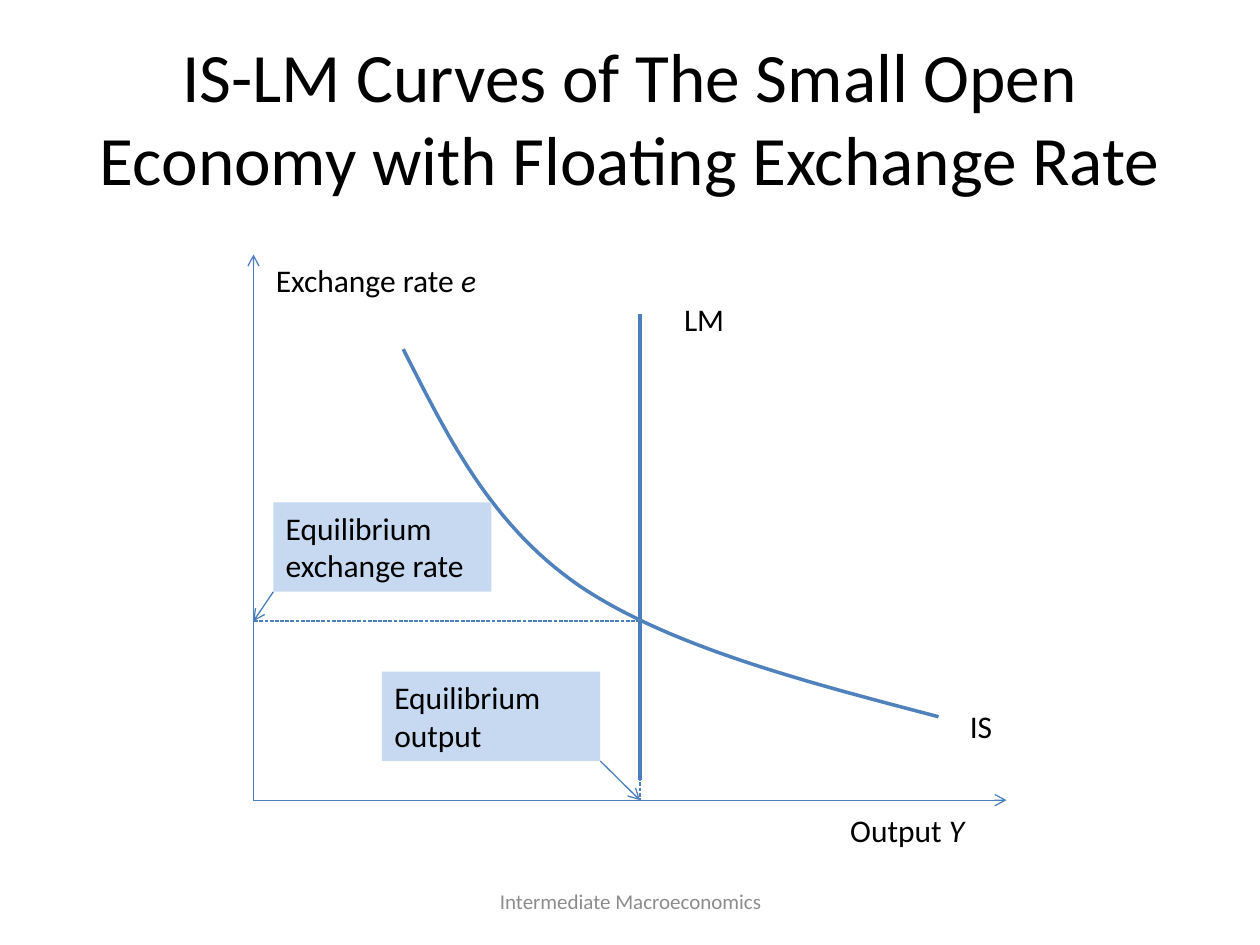
from dataclasses import dataclass

import lxml.etree
import pptx
import pptx.dml.color
import pptx.enum.dml
import pptx.enum.shapes
import pptx.enum.text
import pptx.oxml.ns
import pptx.util
from pptx.util import Cm

BLACK = pptx.dml.color.RGBColor(0x00, 0x00, 0x00)
GREY = pptx.dml.color.RGBColor(0x8C, 0x8C, 0x8C)
LINE_BLUE = pptx.dml.color.RGBColor(0x4B, 0x7E, 0xBC)
CURVE_BLUE = pptx.dml.color.RGBColor(0x4F, 0x81, 0xBD)
BOX_BLUE = pptx.dml.color.RGBColor(0xC6, 0xD9, 0xF1)
ALIGN = pptx.enum.text.PP_ALIGN
ANCHOR = pptx.enum.text.MSO_ANCHOR

Point = tuple[float, float]

# Diagram geometry in centimetres
ORIGIN: Point = (5.11, 16.13)
EQUILIBRIUM: Point = (12.9, 12.52)
OUTPUT_MARK: Point = (EQUILIBRIUM[0], ORIGIN[1])
RATE_MARK: Point = (ORIGIN[0], EQUILIBRIUM[1])
BOX_WIDTH, BOX_HEIGHT = 4.4, 1.8
IS_SEGMENTS: list[list[Point]] = [
    [(8.13, 7.04), (9.02, 8.79), (9.88, 10.57), (11.68, 11.81)],
    [(11.68, 11.81), (13.49, 13.03), (16.21, 13.74), (18.92, 14.45)],
]


@dataclass
class Line:
    start: Point
    end: Point
    width: float = 0.75
    dashed: bool = False
    arrow: bool = False


@dataclass
class Label:
    text: str
    left: float
    top: float
    width: float
    italic_end: str = ""


@dataclass
class Callout:
    text: str
    left: float
    top: float
    corner: int  # 0 for the lower left corner, 1 for the lower right
    target: Point


LINES = [
    Line(ORIGIN, (20.29, ORIGIN[1]), arrow=True),
    Line(ORIGIN, (ORIGIN[0], 5.13), arrow=True),
    Line((EQUILIBRIUM[0], 6.32), (EQUILIBRIUM[0], 15.72), width=2),
    Line(EQUILIBRIUM, RATE_MARK, dashed=True),
    Line((EQUILIBRIUM[0], 14.94), OUTPUT_MARK, dashed=True),
]
LABELS = [
    Label("IS", 19.3, 14.12, 1.0),
    Label("LM", 13.54, 5.92, 1.96),
    Label("Exchange rate ", 5.31, 5.13, 4.8, "e"),
    Label("Output ", 16.89, 16.23, 3.0, "Y"),
]
CALLOUTS = [
    Callout("Equilibrium exchange rate", 5.51, 10.13, 0, RATE_MARK),
    Callout("Equilibrium output", 7.7, 13.54, 1, OUTPUT_MARK),
]


def write_text(frame, text: str, *, italic_end: str = "", size: float = 18,
               color=BLACK, align=ALIGN.LEFT, anchor=ANCHOR.TOP) -> None:
    frame.word_wrap = True
    frame.vertical_anchor = anchor
    paragraph = frame.paragraphs[0]
    paragraph.alignment = align
    for part, italic in ((text, False), (italic_end, True)):
        if part:
            run = paragraph.add_run()
            run.text = part
            run.font.name = "Calibri"
            run.font.size = pptx.util.Pt(size)
            run.font.italic = italic
            run.font.color.rgb = color


def add_line(slide, line: Line) -> None:
    connector = slide.shapes.add_connector(
        pptx.enum.shapes.MSO_CONNECTOR.STRAIGHT,
        *(Cm(value) for value in line.start + line.end))
    connector.line.color.rgb = LINE_BLUE
    connector.line.width = pptx.util.Pt(line.width)
    if line.dashed:
        connector.line.dash_style = pptx.enum.dml.MSO_LINE.SQUARE_DOT
    properties = connector._element.spPr
    if line.arrow:
        outline = properties.find(pptx.oxml.ns.qn("a:ln"))
        lxml.etree.SubElement(outline, pptx.oxml.ns.qn("a:tailEnd"), type="arrow")
    lxml.etree.SubElement(properties, pptx.oxml.ns.qn("a:effectLst"))


def bezier_point(controls: list[Point], t: float) -> Point:
    weights = ((1 - t) ** 3, 3 * t * (1 - t) ** 2, 3 * t ** 2 * (1 - t), t ** 3)
    x, y = (sum(weight * value for weight, value in zip(weights, axis))
            for axis in zip(*controls))
    return x, y


def add_curve(slide, segments: list[list[Point]], steps: int = 30) -> None:
    points = [bezier_point(controls, step / steps)
              for controls in segments for step in range(1, steps + 1)]
    start_x, start_y = segments[0][0]
    builder = slide.shapes.build_freeform(Cm(start_x), Cm(start_y))
    builder.add_line_segments([(Cm(x), Cm(y)) for x, y in points], close=False)
    curve = builder.convert_to_shape()
    curve.shadow.inherit = False
    curve.fill.background()
    curve.line.color.rgb = CURVE_BLUE
    curve.line.width = pptx.util.Pt(2)


def add_label(slide, label: Label) -> None:
    box = slide.shapes.add_textbox(
        Cm(label.left), Cm(label.top), Cm(label.width), Cm(1.02))
    write_text(box.text_frame, label.text, italic_end=label.italic_end)


def add_callout(slide, callout: Callout) -> None:
    box = slide.shapes.add_shape(
        pptx.enum.shapes.MSO_SHAPE.RECTANGLE, Cm(callout.left), Cm(callout.top),
        Cm(BOX_WIDTH), Cm(BOX_HEIGHT))
    box.shadow.inherit = False
    box.fill.solid()
    box.fill.fore_color.rgb = BOX_BLUE
    box.line.fill.background()
    write_text(box.text_frame, callout.text)
    corner = (callout.left + callout.corner * BOX_WIDTH, callout.top + BOX_HEIGHT)
    add_line(slide, Line(corner, callout.target, arrow=True))


def main() -> None:
    presentation = pptx.Presentation()
    presentation.slide_width, presentation.slide_height = Cm(25.4), Cm(19.05)
    slide = presentation.slides.add_slide(presentation.slide_layouts[5])

    # Title and footer
    title = slide.shapes.title
    title.left, title.top, title.width, title.height = (
        Cm(1.27), Cm(0.76), Cm(22.86), Cm(3.18))
    write_text(title.text_frame,
               "IS-LM Curves of The Small Open Economy with Floating Exchange Rate",
               size=39.6, align=ALIGN.CENTER, anchor=ANCHOR.MIDDLE)
    footer = slide.shapes.add_textbox(Cm(8.69), Cm(17.65), Cm(8.05), Cm(1.02))
    write_text(footer.text_frame, "Intermediate Macroeconomics", size=12,
               color=GREY, align=ALIGN.CENTER, anchor=ANCHOR.MIDDLE)

    # Axes, curves and their labels
    for line in LINES:
        add_line(slide, line)
    add_curve(slide, IS_SEGMENTS)
    for label in LABELS:
        add_label(slide, label)

    # Equilibrium callouts
    for callout in CALLOUTS:
        add_callout(slide, callout)

    presentation.save("out.pptx")


if __name__ == "__main__":
    main()
